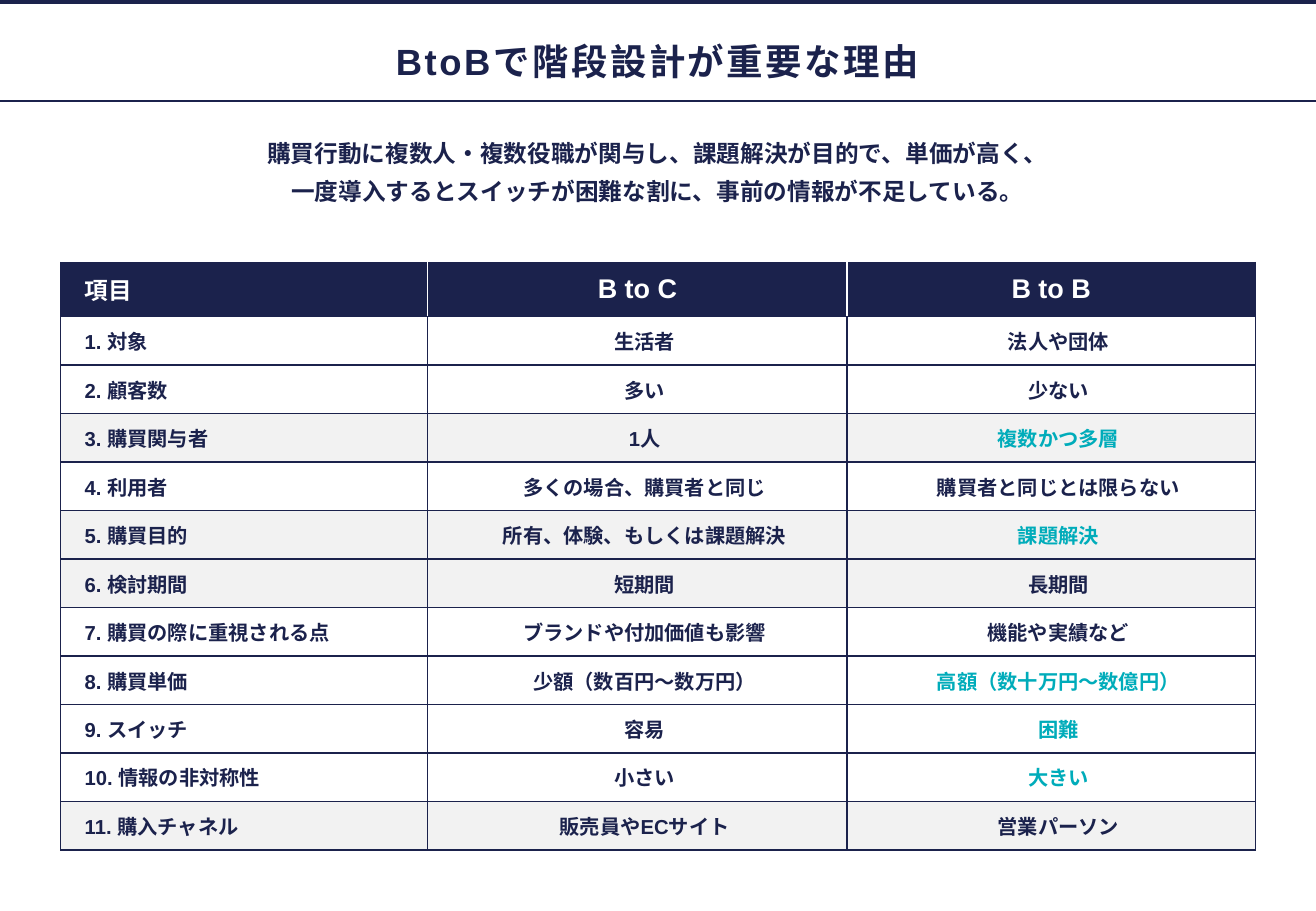
import pptx
import pptx.util
import pptx.dml.color
import pptx.enum.shapes
import pptx.enum.text
import pptx.oxml.ns
from lxml import etree

Cm = pptx.util.Cm
Pt = pptx.util.Pt
RGB = pptx.dml.color.RGBColor
Align = pptx.enum.text.PP_ALIGN
Anchor = pptx.enum.text.MSO_ANCHOR
qn = pptx.oxml.ns.qn

HUES = {"navy": "1B224C", "teal": "00ACBA", "gray": "F2F2F2", "white": "FFFFFF"}
LATIN = "Arial"
ASIAN = "Noto Sans CJK JP"

TITLE = "BtoBで階段設計が重要な理由"
LEAD = [
    "購買行動に複数人・複数役職が関与し、課題解決が目的で、単価が高く、",
    "一度導入するとスイッチが困難な割に、事前の情報が不足している。",
]
HEAD = ("項目", "B to C", "B to B")
ITEMS = [
    ("対象", "生活者", "法人や団体"),
    ("顧客数", "多い", "少ない"),
    ("購買関与者", "1人", "複数かつ多層"),
    ("利用者", "多くの場合、購買者と同じ", "購買者と同じとは限らない"),
    ("購買目的", "所有、体験、もしくは課題解決", "課題解決"),
    ("検討期間", "短期間", "長期間"),
    ("購買の際に重視される点", "ブランドや付加価値も影響", "機能や実績など"),
    ("購買単価", "少額（数百円～数万円）", "高額（数十万円～数億円）"),
    ("スイッチ", "容易", "困難"),
    ("情報の非対称性", "小さい", "大きい"),
    ("購入チャネル", "販売員やECサイト", "営業パーソン"),
]
SHADED = {3, 5, 6, 11}
KEYS = {3, 5, 8, 9, 10}

WIDE, HIGH = 27.51, 19.05
LEFT, SPAN = 1.25, 25.0
COLS = (7.67, 8.77, 8.53)
TOP, HEAD_H, BODY_H = 5.49, 1.13, 11.16


def hue(name):
    return RGB.from_string(HUES[name])


def write(para, text, size, color="navy", font=LATIN):
    run = para.add_run()
    run.text = text
    run.font.size = Pt(size)
    run.font.bold = True
    run.font.name = font
    run.font.color.rgb = hue(color)
    props = run.font._element
    props.find(qn("a:latin")).addnext(
        etree.Element(qn("a:ea"), typeface=ASIAN))
    return props


def border(cell, colors):
    props = cell._tc.get_or_add_tcPr()
    for side, color in zip("LRTB", colors):
        line = etree.SubElement(props, qn("a:ln" + side), w=str(Pt(1)))
        fill = etree.SubElement(line, qn("a:solidFill"))
        etree.SubElement(fill, qn("a:srgbClr"), val=HUES[color])


def add_rules(slide):
    rule = slide.shapes.add_connector(
        pptx.enum.shapes.MSO_CONNECTOR.STRAIGHT, 0, Cm(2.11), Cm(WIDE), Cm(2.11))
    rule.line.color.rgb = hue("navy")
    rule.line.width = Pt(1)
    etree.SubElement(rule._element.spPr, qn("a:effectLst"))
    bar = slide.shapes.add_shape(
        pptx.enum.shapes.MSO_SHAPE.RECTANGLE, 0, Cm(-0.08), Cm(WIDE), Cm(0.16))
    bar.shadow.inherit = False
    bar.fill.solid()
    bar.fill.fore_color.rgb = hue("navy")
    bar.line.fill.background()


def add_title(slide):
    box = slide.shapes.add_textbox(Cm(LEFT), Cm(0.55), Cm(SPAN), Cm(1))
    frame = box.text_frame
    frame.word_wrap = False
    frame.vertical_anchor = Anchor.MIDDLE
    frame.margin_left = frame.margin_right = Cm(0.1)
    frame.margin_top = frame.margin_bottom = Cm(0.1)
    para = frame.paragraphs[0]
    para.alignment = Align.CENTER
    para.line_spacing = 1.5
    write(para, TITLE, 21.6).set("spc", "150")


def add_lead(slide):
    box = slide.shapes.add_textbox(Cm(LEFT), Cm(2.77), Cm(SPAN), Cm(1.73))
    frame = box.text_frame
    frame.word_wrap = True
    for i, text in enumerate(LEAD):
        para = frame.add_paragraph() if i else frame.paragraphs[0]
        para.alignment = Align.CENTER
        para.space_after = Pt(6)
        write(para, text, 14, font=ASIAN)


def fill_cell(cell, row, col, text):
    top = row == 0
    inner = "white" if top else "navy"
    border(cell, (inner if col else "navy", inner if col < 2 else "navy",
                  "navy", "navy"))
    cell.fill.solid()
    back = "navy" if top else "gray" if row in SHADED else "white"
    cell.fill.fore_color.rgb = hue(back)
    cell.vertical_anchor = Anchor.MIDDLE
    cell.margin_top = cell.margin_bottom = Cm(0.2)
    sides = (0.5, 0.5) if col == 0 else (0.25, 0.25) if top else (0.3, 0)
    cell.margin_left, cell.margin_right = map(Cm, sides)
    para = cell.text_frame.paragraphs[0]
    para.alignment = Align.CENTER if col else Align.LEFT
    size = 12 if not top else 16 if col else 14
    ink = "white" if top else "teal" if col == 2 and row in KEYS else "navy"
    write(para, text, size, ink)


def add_grid(slide):
    rows = [HEAD] + [(f"{n}. {name}", *rest)
                     for n, (name, *rest) in enumerate(ITEMS, 1)]
    grid = slide.shapes.add_table(
        len(rows), len(COLS), Cm(LEFT + 0.02), Cm(TOP), Cm(sum(COLS)),
        Cm(HEAD_H + BODY_H)).table
    grid.horz_banding = False
    for col, width in zip(grid.columns, COLS):
        col.width = Cm(width)
    for r, texts in enumerate(rows):
        grid.rows[r].height = Cm(BODY_H / len(ITEMS) if r else HEAD_H)
        for c, text in enumerate(texts):
            fill_cell(grid.cell(r, c), r, c, text)


def main():
    deck = pptx.Presentation()
    deck.slide_width, deck.slide_height = Cm(WIDE), Cm(HIGH)
    slide = deck.slides.add_slide(deck.slide_layouts[6])
    add_rules(slide)
    add_title(slide)
    add_lead(slide)
    add_grid(slide)
    deck.save("out.pptx")


if __name__ == "__main__":
    main()
